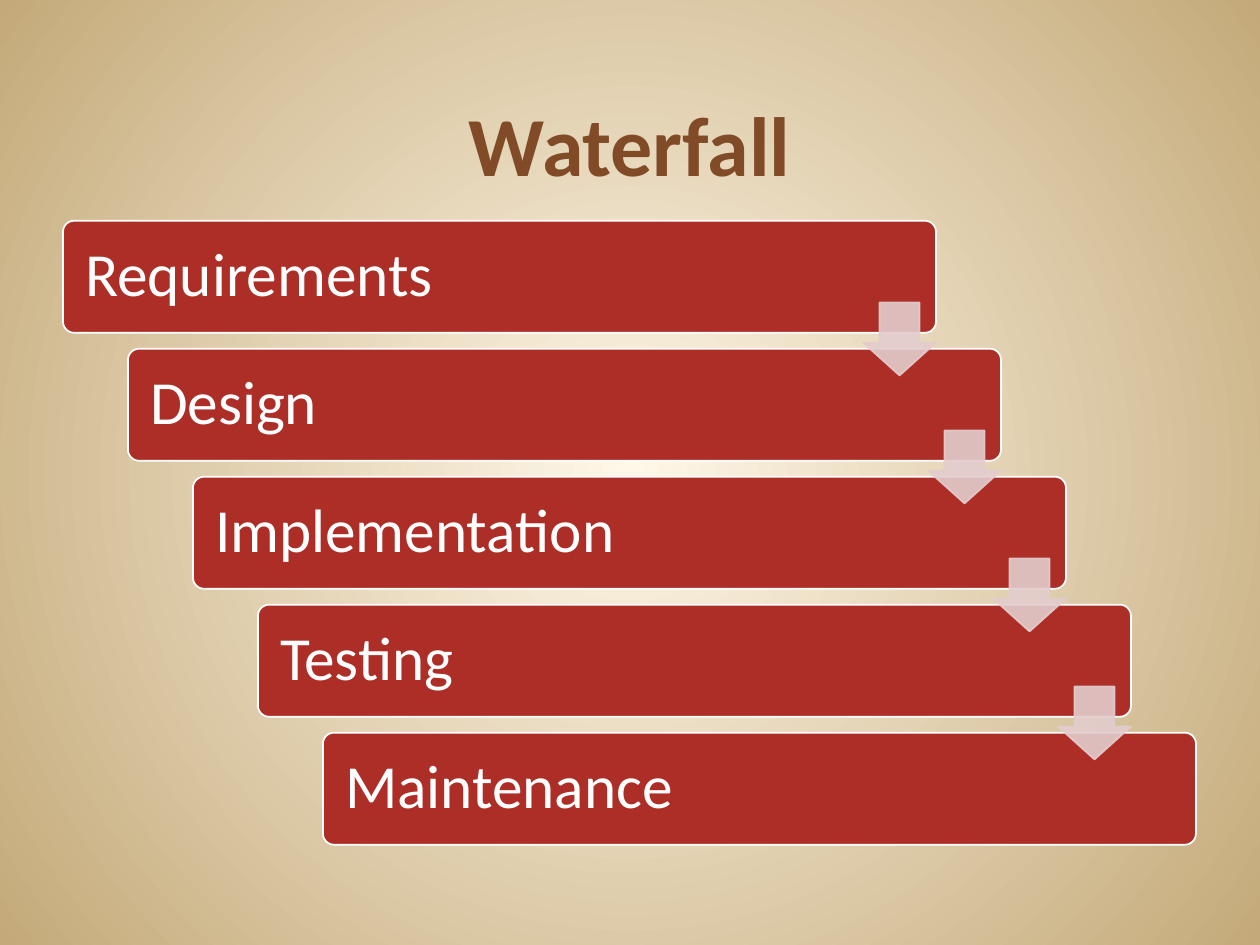
"""Build a slide with the five stages of the waterfall model."""
from dataclasses import dataclass

from lxml import etree
from pptx import Presentation
from pptx.dml.color import RGBColor
from pptx.enum.shapes import MSO_SHAPE
from pptx.enum.text import MSO_ANCHOR, PP_ALIGN
from pptx.oxml.ns import qn
from pptx.util import Cm, Pt

BAR = MSO_SHAPE.ROUNDED_RECTANGLE
ARROW = MSO_SHAPE.DOWN_ARROW
MIDDLE, BOTTOM = MSO_ANCHOR.MIDDLE, MSO_ANCHOR.BOTTOM
LEFT, CENTER = PP_ALIGN.LEFT, PP_ALIGN.CENTER

CREAM = RGBColor(0xFF, 0xF7, 0xE8)
SAND = RGBColor(0xC4, 0xAA, 0x7A)
BROWN = RGBColor(0x80, 0x4B, 0x26)
RED = RGBColor(0xAD, 0x2E, 0x27)
PINK = RGBColor(0xE3, 0xCD, 0xCD)
WHITE = RGBColor(0xFF, 0xFF, 0xFF)

FONT = "Calibri"
STAGES = ("Requirements", "Design", "Implementation", "Testing", "Maintenance")
STEP_X, STEP_Y = 1.31, 2.58


@dataclass(frozen=True)
class Box:
    """A place and size in centimetres."""
    x: float
    y: float
    w: float
    h: float

    def step(self, n: int) -> "Box":
        """Return this box moved n stages down the stairs."""
        return Box(self.x + n * STEP_X, self.y + n * STEP_Y, self.w, self.h)

    def lengths(self) -> tuple:
        """Return left, top, width and height as lengths."""
        return Cm(self.x), Cm(self.y), Cm(self.w), Cm(self.h)


TITLE = Box(1.27, 0.84, 22.86, 3.18)
FIRST_BAR = Box(1.27, 4.45, 17.6, 2.26)
FIRST_ARROW = Box(17.4, 6.1, 1.47, 1.47)


def paint_back(slide) -> None:
    """Fill the background with a round gradient."""
    fill = slide.background.fill
    fill.gradient()
    for stop, color in zip(fill.gradient_stops, (CREAM, SAND)):
        stop.color.rgb = color
    grad = slide.element.find(".//" + qn("a:gradFill"))
    grad.remove(grad.find(qn("a:lin")))
    round_ = etree.SubElement(grad, qn("a:path"), path="circle")
    etree.SubElement(round_, qn("a:fillToRect"),
                     {side: "50000" for side in "ltrb"})


def set_text(shape, text: str, size: int, color: RGBColor, align, anchor,
             bold: bool = False):
    """Write one styled paragraph and return it."""
    frame = shape.text_frame
    frame.text = text
    frame.word_wrap = True
    frame.vertical_anchor = anchor
    para = frame.paragraphs[0]
    para.alignment = align
    font = para.font
    font.name, font.size, font.bold = FONT, Pt(size), bold
    font.color.rgb = color
    return para


def add_title(slide, text: str) -> None:
    """Place and style the title."""
    title = slide.shapes.title
    title.left, title.top, title.width, title.height = TITLE.lengths()
    set_text(title, text, 48, BROWN, CENTER, BOTTOM, bold=True)


def add_shape(slide, kind, box: Box, fill: RGBColor, line: RGBColor,
              adjust: tuple):
    """Draw a flat preset shape."""
    shape = slide.shapes.add_shape(kind, *box.lengths())
    shape.shadow.inherit = False
    shape.fill.solid()
    shape.fill.fore_color.rgb = fill
    shape.line.color.rgb = line
    shape.line.width = Pt(1)
    for n, value in enumerate(adjust):
        shape.adjustments[n] = value
    return shape


def add_bar(slide, text: str, box: Box) -> None:
    """Draw one stage."""
    bar = add_shape(slide, BAR, box, RED, WHITE, (0.1,))
    bar.text_frame.margin_left = Cm(0.38)
    para = set_text(bar, text, 35, WHITE, LEFT, MIDDLE)
    para.line_spacing = 0.9


def add_arrow(slide, box: Box) -> None:
    """Draw a slightly clear arrow to the next stage."""
    arrow = add_shape(slide, ARROW, box, PINK, PINK, (0.55, 0.45))
    for color in arrow.element.iter(qn("a:srgbClr")):
        etree.SubElement(color, qn("a:alpha"), val="90000")


def main() -> None:
    """Build and save the deck."""
    deck = Presentation()
    deck.slide_width, deck.slide_height = Cm(25.4), Cm(19.05)
    slide = deck.slides.add_slide(deck.slide_layouts[5])
    paint_back(slide)
    add_title(slide, "Waterfall")
    for n, stage in enumerate(STAGES):
        add_bar(slide, stage, FIRST_BAR.step(n))
    for n in range(len(STAGES) - 1):
        add_arrow(slide, FIRST_ARROW.step(n))
    deck.save("out.pptx")


if __name__ == "__main__":
    main()
